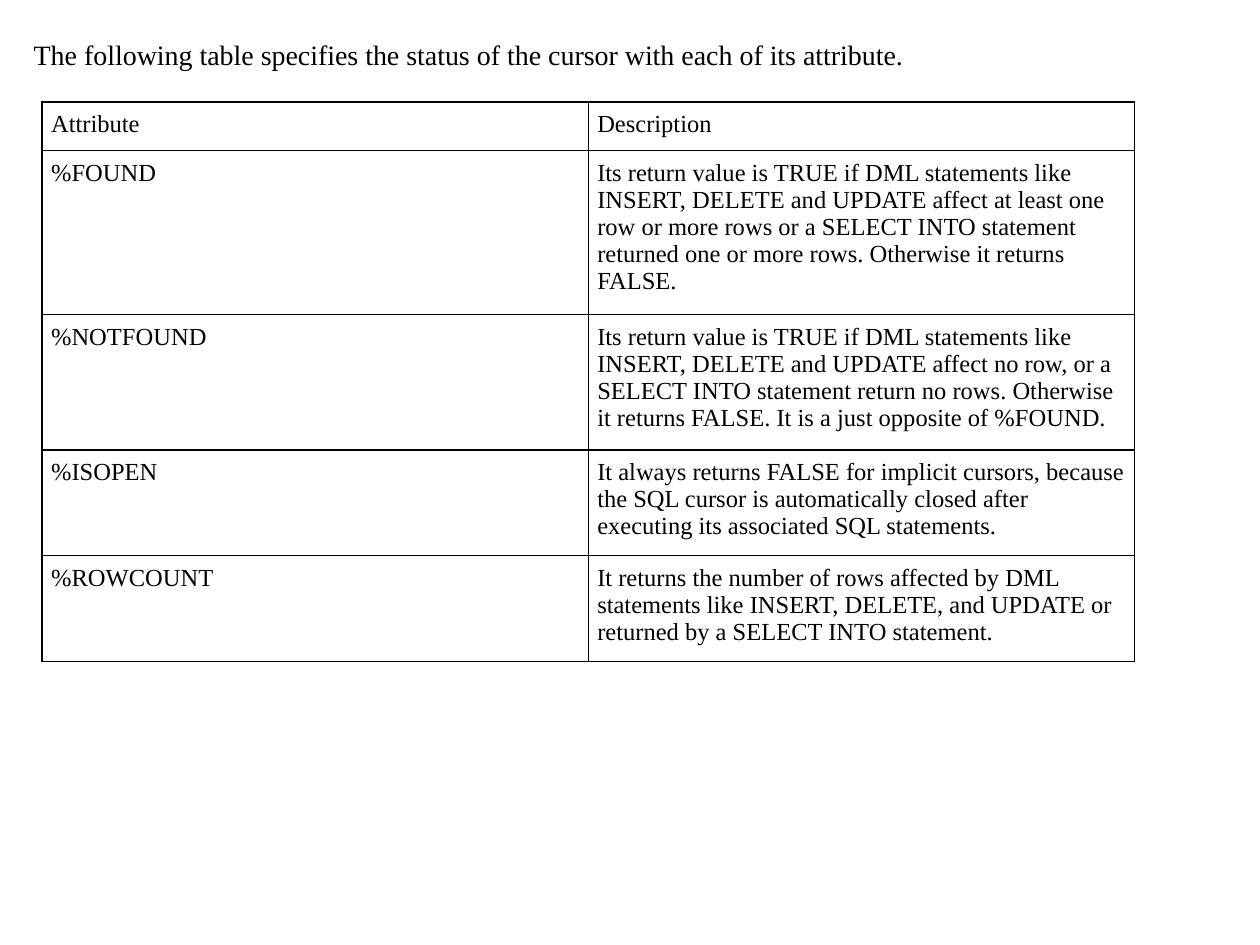
from lxml.etree import SubElement
from pptx import Presentation
from pptx.dml.color import RGBColor
from pptx.enum.text import MSO_AUTO_SIZE as AutoSize
from pptx.oxml.ns import qn
from pptx.util import Cm, Pt

COLOURS = {"text": "000000", "border": "000000", "background": "FFFFFF"}
FONT = "Times New Roman"
ROWS = [
    (0.97, "Attribute", "Description"),
    (3.31, "%FOUND",
     "Its return value is TRUE if DML statements like INSERT, DELETE and UPDATE "
     "affect at least one row or more rows or a SELECT INTO statement returned "
     "one or more rows. Otherwise it returns FALSE."),
    (2.73, "%NOTFOUND",
     "Its return value is TRUE if DML statements like INSERT, DELETE and UPDATE "
     "affect no row, or a SELECT INTO statement return no rows. Otherwise it "
     "returns FALSE. It is a just opposite of %FOUND."),
    (2.13, "%ISOPEN",
     "It always returns FALSE for implicit cursors, because the SQL cursor is "
     "automatically closed after executing its associated SQL statements."),
    (2.13, "%ROWCOUNT",
     "It returns the number of rows affected by DML statements like INSERT, "
     "DELETE, and UPDATE or returned by a SELECT INTO statement."),
]


def add_run(paragraph, text, size):
    run = paragraph.add_run()
    run.text = text
    run.font.name = FONT
    run.font.size = Pt(size)
    run.font.bold = False
    run.font.color.rgb = RGBColor.from_string(COLOURS["text"])


def add_borders(cell):
    properties = cell._tc.get_or_add_tcPr()
    for side in ("lnL", "lnR", "lnT", "lnB"):
        line = SubElement(properties, qn(f"a:{side}"), w=str(Pt(1)))
        fill = SubElement(line, qn("a:solidFill"))
        SubElement(fill, qn("a:srgbClr"), val=COLOURS["border"])


presentation = Presentation()
presentation.slide_width = Cm(25.4)
presentation.slide_height = Cm(19.05)
slide = presentation.slides.add_slide(presentation.slide_layouts[6])
slide.background.fill.solid()
slide.background.fill.fore_color.rgb = RGBColor.from_string(COLOURS["background"])

table_height = sum(height for height, *_ in ROWS)
table_frame = slide.shapes.add_table(
    len(ROWS), 2, Cm(0.85), Cm(2.06), Cm(22.02), Cm(table_height))
table = table_frame.table
table.first_row = False
table.horz_banding = False

for row, (height, *texts) in zip(table.rows, ROWS):
    row.height = Cm(height)
    for cell, text in zip(row.cells, texts):
        cell.margin_left = cell.margin_right = Cm(0.18)
        cell.margin_top = cell.margin_bottom = Cm(0.18)
        add_borders(cell)
        cell.fill.background()
        add_run(cell.text_frame.paragraphs[0], text, 14)

intro = slide.shapes.add_textbox(Cm(0.43), Cm(0.64), Cm(23.06), Cm(0.94))
intro.text_frame.word_wrap = True
intro.text_frame.auto_size = AutoSize.SHAPE_TO_FIT_TEXT
add_run(
    intro.text_frame.paragraphs[0],
    "The following table specifies the status of the cursor with each of its attribute.",
    16)

presentation.save("out.pptx")
